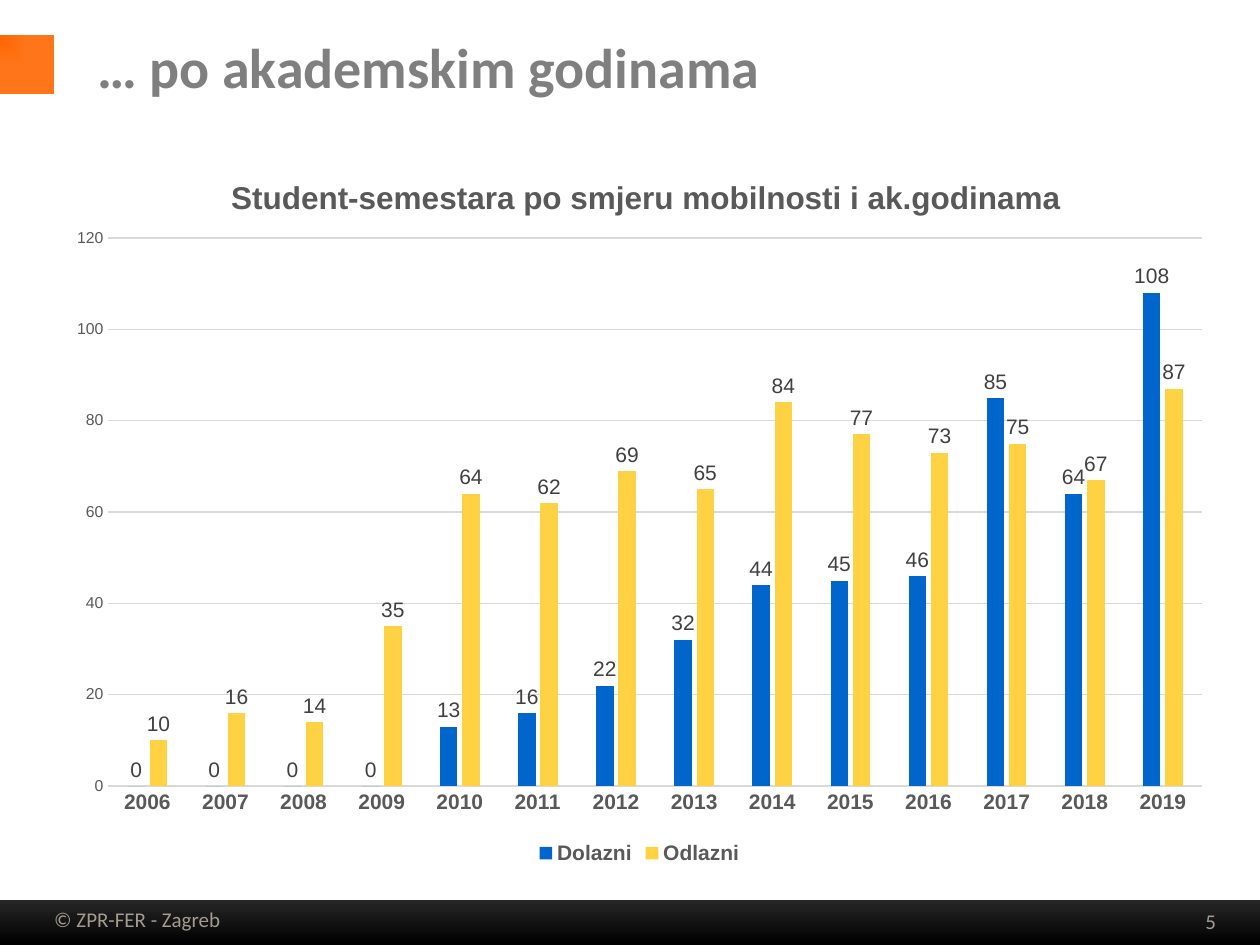
from lxml import etree
from pptx import Presentation
from pptx.chart.data import CategoryChartData
from pptx.dml.color import RGBColor
from pptx.enum.chart import XL_CHART_TYPE, XL_LABEL_POSITION, XL_LEGEND_POSITION, XL_TICK_MARK
from pptx.enum.shapes import MSO_SHAPE
from pptx.enum.text import MSO_ANCHOR, PP_ALIGN
from pptx.oxml import parse_xml
from pptx.oxml.ns import nsdecls, qn
from pptx.util import Inches, Pt

COLUMNS = XL_CHART_TYPE.COLUMN_CLUSTERED
OUTSIDE, BOTTOM = XL_LABEL_POSITION.OUTSIDE_END, XL_LEGEND_POSITION.BOTTOM
NO_TICK = XL_TICK_MARK.NONE
LEFT, CENTER, RIGHT = PP_ALIGN.LEFT, PP_ALIGN.CENTER, PP_ALIGN.RIGHT

# Content
TITLE = "… po akademskim godinama"
CHART_TITLE = "Student-semestara po smjeru mobilnosti i ak.godinama"
YEARS = [str(year) for year in range(2006, 2020)]
SERIES = [
    ("Dolazni", "0066CC", [0, 0, 0, 0, 13, 16, 22, 32, 44, 45, 46, 85, 64, 108]),
    ("Odlazni", "FFD243", [10, 16, 14, 35, 64, 62, 69, 65, 84, 77, 73, 75, 67, 87]),
]
FOOTERS = [
    ("© ZPR-FER - Zagreb", (0.17, 7.15, 1.84, 0.29), CENTER),
    ("5", (9.17, 7.17, 0.58, 0.29), RIGHT),
]

# Places in inches: left, top, width, height
FOOTER_BAR = (0, 7.14, 10, 0.36)
ACCENT = (0, 0.28, 0.43, 0.47)
TITLE_BOX = (0.67, 0.13, 9.06, 0.79)
CHART_BOX = (0.43, 1.15, 9.29, 5.75)
PLOT_BOX = (0.86, 1.89, 8.68, 4.35)
CHART_TITLE_AT = (1.79, 1.36)

# Text formats
HEADING = {"name": "Calibri", "size": Pt(32), "bold": True, "color": "7F7F7F"}
FOOTER = {"name": "Calibri", "size": Pt(12), "color": "A39B90"}
CHART_HEAD = {"name": "Arial", "size": Pt(18), "bold": True, "color": "595959"}
STRONG = {**CHART_HEAD, "size": Pt(12)}
SCALE = {"name": "Arial", "size": Pt(9), "bold": False, "color": "595959"}
LABEL = {"name": "Arial", "size": Pt(12), "bold": False, "color": "404040"}


def rgb(code):
    return RGBColor.from_string(code)


def box(place):
    return [Inches(v) for v in place]


def style(font, fmt):
    for key, value in fmt.items():
        if key == "color":
            font.color.rgb = rgb(value)
        else:
            setattr(font, key, value)


def write(tf, text, fmt, align, anchor):
    tf.word_wrap = True
    tf.vertical_anchor = anchor
    p = tf.paragraphs[0]
    p.alignment = align
    r = p.add_run()
    r.text = text
    style(r.font, fmt)


def add_gradient_bar(slide, place, colors):
    sp = slide.shapes.add_shape(MSO_SHAPE.RECTANGLE, *box(place))
    sp.shadow.inherit = False
    sp.line.fill.background()
    sp.fill.gradient()
    sp.fill.gradient_angle = 270
    for stop, color in zip(sp.fill.gradient_stops, colors):
        stop.color.rgb = rgb(color)
    return sp


def set_layout(parent, place, inner=False):
    """Place a chart part by fractions of the chart area."""
    left, top, width, height = CHART_BOX
    values = [(place[0] - left) / width, (place[1] - top) / height]
    values += [v / whole for v, whole in zip(place[2:], (width, height))]
    layout = parent.get_or_add_layout() if hasattr(parent, "get_or_add_layout") else parent.find(qn("c:layout"))
    if layout is None:
        layout = parse_xml(f"<c:layout {nsdecls('c')}/>")
        parent.insert(0, layout)
    for child in list(layout):
        layout.remove(child)
    manual = etree.SubElement(layout, qn("c:manualLayout"))
    parts = [("layoutTarget", "inner")] if inner else []
    parts += [("xMode", "edge"), ("yMode", "edge")]
    parts += [(key, f"{v:.4f}") for key, v in zip("xywh", values)]
    for key, value in parts:
        etree.SubElement(manual, qn(f"c:{key}")).set("val", value)


def add_mobility_chart(slide):
    data = CategoryChartData()
    data.categories = YEARS
    for name, _, values in SERIES:
        data.add_series(name, values)
    chart = slide.shapes.add_chart(COLUMNS, *box(CHART_BOX), data).chart
    style(chart.font, {"name": "Arial", "size": Pt(10), "color": "000000"})

    chart.has_title = True
    r = chart.chart_title.text_frame.paragraphs[0].add_run()
    r.text = CHART_TITLE
    style(r.font, CHART_HEAD)
    chart.chart_title.include_in_layout = False

    chart.has_legend = True
    chart.legend.position = BOTTOM
    chart.legend.include_in_layout = False
    style(chart.legend.font, STRONG)

    # Axes
    cat, val = chart.category_axis, chart.value_axis
    for axis, fmt in ((cat, STRONG), (val, SCALE)):
        axis.major_tick_mark = axis.minor_tick_mark = NO_TICK
        style(axis.tick_labels.font, fmt)
    val.minimum_scale, val.maximum_scale, val.major_unit = 0, 120, 20
    val.format.line.fill.background()
    for line in (cat.format.line, val.major_gridlines.format.line):
        line.color.rgb = rgb("D9D9D9")
        line.width = Pt(0.75)

    # Columns
    plot = chart.plots[0]
    plot.gap_width, plot.overlap = 219, -27
    plot.vary_by_categories = False
    for series, (_, color, _) in zip(plot.series, SERIES):
        series.format.fill.solid()
        series.format.fill.fore_color.rgb = rgb(color)
        labels = series.data_labels
        labels.show_value = True
        labels.position = OUTSIDE
        style(labels.font, LABEL)

    root = chart.element
    set_layout(root.find(".//" + qn("c:plotArea")), PLOT_BOX, inner=True)
    set_layout(root.find(".//" + qn("c:title")), CHART_TITLE_AT)


prs = Presentation()
prs.slide_width, prs.slide_height = Inches(10), Inches(7.5)
slide = prs.slides.add_slide(prs.slide_layouts[5])

# Footer bar and texts
add_gradient_bar(slide, FOOTER_BAR, ("262626", "000000"))
for text, place, align in FOOTERS:
    tb = slide.shapes.add_textbox(*box(place))
    write(tb.text_frame, text, FOOTER, align, MSO_ANCHOR.BOTTOM)

# Accent block, shaded from its top left corner
accent = add_gradient_bar(slide, ACCENT, ("FF6600", "FF751A"))
lin = accent.element.find(".//" + qn("a:lin"))
lin.getparent().replace(lin, parse_xml(
    f'<a:path {nsdecls("a")} path="rect"><a:fillToRect r="100000" b="100000"/></a:path>'))

# Title
title = slide.shapes.title
title.left, title.top, title.width, title.height = box(TITLE_BOX)
write(title.text_frame, TITLE, HEADING, LEFT, MSO_ANCHOR.MIDDLE)

add_mobility_chart(slide)
prs.save("out.pptx")
